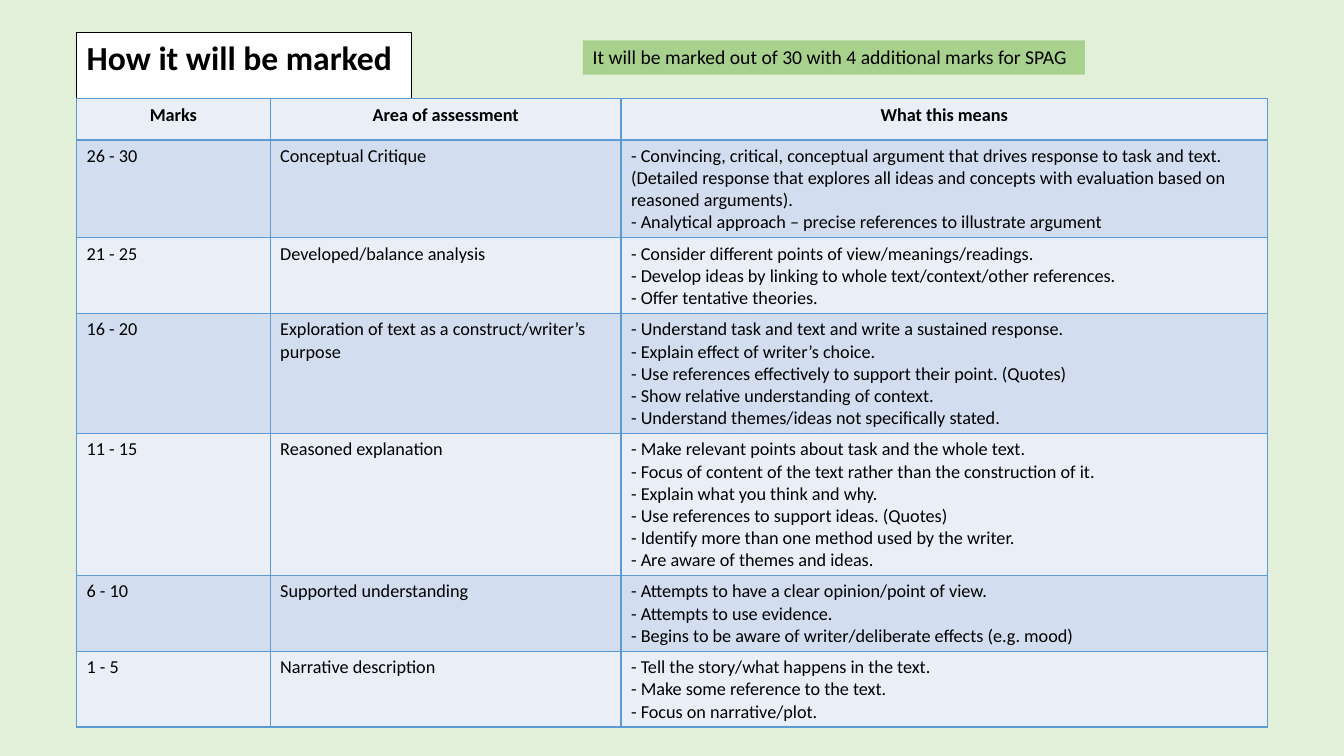
"""Build the slide that explains how the work will be marked."""
from dataclasses import dataclass

from lxml import etree
from pptx import Presentation
from pptx import util as u
from pptx.dml.color import RGBColor
from pptx.enum import shapes, text
from pptx.oxml.ns import qn


@dataclass(frozen=True)
class Theme:
    font: str = "Calibri"
    ink: str = "000000"
    page: str = "E2F0D9"
    title_fill: str = "FFFFFF"
    note_fill: str = "A9D18E"
    border: str = "5B9BD5"
    bands: tuple[str, str] = ("EAEFF7", "D2DEEF")
    title_size: float = 24
    note_size: float = 14
    table_size: float = 13
    title_line: float = 0.75
    table_line: float = 1


@dataclass(frozen=True)
class Band:
    marks: str
    area: str
    meaning: tuple[str, ...]
    lines: int


THEME = Theme()
HEADINGS = ("Marks", "Area of assessment", "What this means")
COLUMN_WIDTHS = (1.92, 3.48, 6.41)
HEADER_HEIGHT, LINE_HEIGHT, ROW_PADDING = 0.41, 0.22, 0.09

BANDS = (
    Band("26 - 30", "Conceptual Critique", (
        "- Convincing, critical, conceptual argument that drives response to task and text. "
        "(Detailed response that explores all ideas and concepts with evaluation based on "
        "reasoned arguments).",
        "- Analytical approach – precise references to illustrate argument",
    ), 4),
    Band("21 - 25", "Developed/balance analysis", (
        "- Consider different points of view/meanings/readings.",
        "- Develop ideas by linking to whole text/context/other references.",
        "- Offer tentative theories.",
    ), 3),
    Band("16 - 20", "Exploration of text as a construct/writer’s purpose", (
        "- Understand task and text and write a sustained response.",
        "- Explain effect of writer’s choice.",
        "- Use references effectively to support their point. (Quotes)",
        "- Show relative understanding of context.",
        "- Understand themes/ideas not specifically stated.",
    ), 5),
    Band("11 - 15", "Reasoned explanation", (
        "- Make relevant points about task and the whole text.",
        "- Focus of content of the text rather than the construction of it.",
        "- Explain what you think and why.",
        "- Use references to support ideas. (Quotes)",
        "- Identify more than one method used by the writer.",
        "- Are aware of themes and ideas.",
    ), 6),
    Band("6 - 10", "Supported understanding", (
        "- Attempts to have a clear opinion/point of view.",
        "- Attempts to use evidence.",
        "- Begins to be aware of writer/deliberate effects (e.g. mood)",
    ), 3),
    Band("1 - 5", "Narrative description", (
        "- Tell the story/what happens in the text.",
        "- Make some reference to the text.",
        "- Focus on narrative/plot.",
    ), 3),
)


def write(frame, *paragraphs: str, size: float, bold: bool = False, centred: bool = False) -> None:
    for index, words in enumerate(paragraphs):
        para = frame.paragraphs[0] if index == 0 else frame.add_paragraph()
        para.alignment = text.PP_ALIGN.CENTER if centred else text.PP_ALIGN.LEFT
        span = para.add_run()
        span.text = words
        span.font.name = THEME.font
        span.font.size = u.Pt(size)
        span.font.bold = bold
        span.font.color.rgb = RGBColor.from_string(THEME.ink)


def paint(fill, colour: str) -> None:
    fill.solid()
    fill.fore_color.rgb = RGBColor.from_string(colour)


def format_box(box, colour: str) -> None:
    paint(box.fill, colour)
    frame = box.text_frame
    frame.word_wrap = True
    frame.auto_size = text.MSO_AUTO_SIZE.SHAPE_TO_FIT_TEXT
    frame.vertical_anchor = text.MSO_ANCHOR.TOP


def outline_cell(cell) -> None:
    properties = cell._tc.get_or_add_tcPr()
    for side in ("a:lnL", "a:lnR", "a:lnT", "a:lnB"):
        line = etree.SubElement(properties, qn(side), w=str(u.Pt(THEME.table_line)))
        fill = etree.SubElement(line, qn("a:solidFill"))
        etree.SubElement(fill, qn("a:srgbClr"), val=THEME.border)


def add_title(page) -> None:
    title = page.shapes.title
    title.left, title.top = u.Inches(0.76), u.Inches(0.32)
    title.width, title.height = u.Inches(3.32), u.Inches(0.51)
    format_box(title, THEME.title_fill)
    title.line.color.rgb = RGBColor.from_string(THEME.ink)
    title.line.width = u.Pt(THEME.title_line)
    write(title.text_frame, "How it will be marked", size=THEME.title_size, bold=True)


def add_mark_table(page) -> None:
    heights = [HEADER_HEIGHT] + [ROW_PADDING + LINE_HEIGHT * band.lines for band in BANDS]
    table = page.shapes.add_table(
        len(heights), len(HEADINGS), u.Inches(0.76), u.Inches(0.98),
        u.Inches(sum(COLUMN_WIDTHS)), u.Inches(sum(heights))).table
    table.first_row = table.horz_banding = False
    for column, width in zip(table.columns, COLUMN_WIDTHS):
        column.width = u.Inches(width)
    contents = [[(heading,) for heading in HEADINGS]]
    contents += [[(band.marks,), (band.area,), band.meaning] for band in BANDS]
    for index, (row, height) in enumerate(zip(table.rows, heights)):
        row.height = u.Inches(height)
        heading = index == 0
        for cell, paragraphs in zip(row.cells, contents[index]):
            outline_cell(cell)
            paint(cell.fill, THEME.bands[index % 2])
            write(cell.text_frame, *paragraphs, size=THEME.table_size, bold=heading, centred=heading)


def add_note(page) -> None:
    note = page.shapes.add_shape(
        shapes.MSO_SHAPE.RECTANGLE,
        u.Inches(5.78), u.Inches(0.4), u.Inches(4.98), u.Inches(0.34))
    note.shadow.inherit = False
    note.line.fill.background()
    format_box(note, THEME.note_fill)
    write(note.text_frame, "It will be marked out of 30 with 4 additional marks for SPAG",
          size=THEME.note_size)


def main() -> None:
    deck = Presentation()
    deck.slide_width, deck.slide_height = u.Inches(13.33), u.Inches(7.5)
    page = deck.slides.add_slide(deck.slide_layouts.get_by_name("Title Only"))
    paint(page.background.fill, THEME.page)
    add_title(page)
    add_mark_table(page)
    add_note(page)
    deck.save("out.pptx")


if __name__ == "__main__":
    main()
